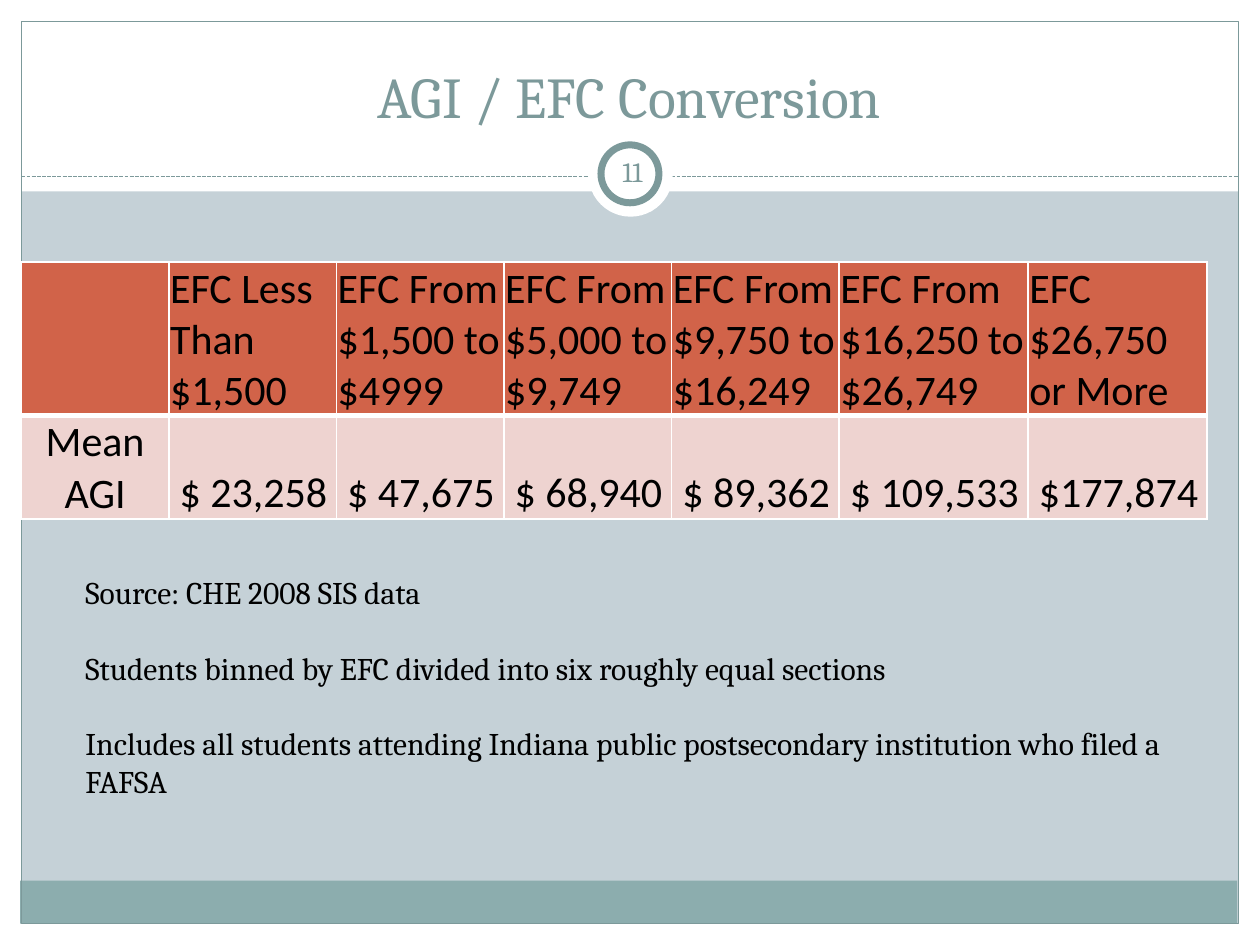
from lxml.etree import SubElement
from pptx import Presentation
from pptx.dml.color import RGBColor
from pptx.enum.dml import MSO_LINE_DASH_STYLE as Dash
from pptx.enum.shapes import MSO_CONNECTOR as Connector, MSO_SHAPE as Shape
from pptx.enum.text import MSO_ANCHOR as Anchor, PP_ALIGN as Align
from pptx.oxml.ns import qn
from pptx.util import Inches, Pt

WHITE, BLACK = "FFFFFF", "000000"
SLATE, TEAL, BACKDROP = "7C999A", "8CADAE", "C5D1D7"
HEADER_FILL, BODY_FILL = "D16349", "EED3D0"

FRAME_FILLS = [
    (0, 7.33, 10, 0.17, WHITE),
    (0, 0, 10, 1.52, WHITE),
    (0, 0, 0.17, 7.5, WHITE),
    (9.83, 0, 0.17, 7.5, WHITE),
    (0.16, 6.99, 9.66, 0.34, TEAL),
]
COLUMN_WIDTHS = [1.17, 1.33, 1.33, 1.33, 1.33, 1.5, 1.42]
ROW_HEIGHTS = [1.22, 0.82]
ROWS = [
    ["", "EFC Less Than $1,500", "EFC From $1,500 to $4999",
     "EFC From $5,000 to $9,749", "EFC From $9,750 to $16,249",
     "EFC From $16,250 to $26,749", "EFC $26,750 or More"],
    ["Mean AGI", " $ 23,258", " $ 47,675", " $ 68,940", " $ 89,362",
     " $ 109,533", " $177,874"],
]
NOTES = [
    "Source: CHE 2008 SIS data",
    "Students binned by EFC divided into six roughly equal sections",
    "Includes all students attending Indiana public postsecondary "
    "institution who filed a FAFSA",
]


def color(value):
    return RGBColor.from_string(value)


def paint(target, value):
    target.fill.solid()
    target.fill.fore_color.rgb = color(value)


def write(para, text, size, font="Cambria", ink=BLACK, align=Align.LEFT, after=0):
    para.alignment = align
    para.space_after = Pt(after)
    span = para.add_run()
    span.text = text
    span.font.size = Pt(size)
    span.font.name = font
    span.font.color.rgb = color(ink)


def add_shape(page, kind, left, top, width, height, fill=None, line=None, weight=0.75):
    shape = page.shapes.add_shape(
        kind, Inches(left), Inches(top), Inches(width), Inches(height))
    shape.shadow.inherit = False
    if fill:
        paint(shape, fill)
    else:
        shape.fill.background()
    if line:
        shape.line.color.rgb = color(line)
        shape.line.width = Pt(weight)
    else:
        shape.line.fill.background()


def add_dashed_rule(page, left, right, top):
    rule = page.shapes.add_connector(
        Connector.STRAIGHT, Inches(left), Inches(top), Inches(right), Inches(top))
    rule.line.color.rgb = color(SLATE)
    rule.line.width = Pt(0.75)
    rule.line.dash_style = Dash.SQUARE_DOT
    SubElement(rule.element.spPr, qn("a:effectLst"))


def add_frame(page):
    for left, top, width, height, fill in FRAME_FILLS:
        add_shape(page, Shape.RECTANGLE, left, top, width, height, fill)
    add_shape(page, Shape.RECTANGLE, 0.17, 0.17, 9.66, 7.16, line=SLATE)
    add_dashed_rule(page, 0.17, 9.83, 1.4)
    add_shape(page, Shape.OVAL, 4.67, 1.05, 0.67, 0.67, WHITE)
    add_shape(page, Shape.OVAL, 4.77, 1.15, 0.46, 0.46, WHITE, SLATE, 4)


def place_title(page, text):
    title = page.shapes.title
    title.left, title.top = Inches(0.33), Inches(0.25)
    title.width, title.height = Inches(9.33), Inches(0.83)
    title.text_frame.vertical_anchor = Anchor.BOTTOM
    write(title.text_frame.paragraphs[0], text, 33, ink=SLATE, align=Align.CENTER)
    title.element.getparent().append(title.element)


def add_text(page, left, top, width, height, texts, size,
             anchor=Anchor.TOP, inset=None, **style):
    box = page.shapes.add_textbox(
        Inches(left), Inches(top), Inches(width), Inches(height))
    frame = box.text_frame
    frame.word_wrap = True
    frame.vertical_anchor = anchor
    if inset is not None:
        frame.margin_left = frame.margin_right = Inches(inset)
        frame.margin_top = frame.margin_bottom = Inches(inset)
    for index, text in enumerate(texts):
        para = frame.add_paragraph() if index else frame.paragraphs[0]
        write(para, text, size, **style)


def add_border(cell, side, weight):
    properties = cell._tc.get_or_add_tcPr()
    line = SubElement(properties, qn(f"a:ln{side}"), w=str(Pt(weight)))
    fill = SubElement(line, qn("a:solidFill"))
    SubElement(fill, qn("a:srgbClr"), val=WHITE)


def format_cell(cell, text, is_header, is_label):
    cell.margin_left = cell.margin_right = cell.margin_top = Inches(0.01)
    cell.margin_bottom = 0
    cell.vertical_anchor = Anchor.BOTTOM
    for side in "LRTB":
        thick = side == ("B" if is_header else "T")
        add_border(cell, side, 3 if thick else 1)
    paint(cell, HEADER_FILL if is_header else BODY_FILL)
    if text:
        write(cell.text_frame.paragraphs[0], text, 24, font="Calibri",
              align=Align.CENTER if is_label else Align.LEFT)


def add_income_table(page):
    table = page.shapes.add_table(
        len(ROWS), len(COLUMN_WIDTHS), Inches(0.17), Inches(2.08),
        Inches(sum(COLUMN_WIDTHS)), Inches(sum(ROW_HEIGHTS))).table
    table.first_row = table.horz_banding = False
    for column, width in zip(table.columns, COLUMN_WIDTHS):
        column.width = Inches(width)
    for row_index, texts in enumerate(ROWS):
        table.rows[row_index].height = Inches(ROW_HEIGHTS[row_index])
        for column_index, text in enumerate(texts):
            format_cell(table.cell(row_index, column_index), text,
                        row_index == 0, column_index == 0)


def main():
    deck = Presentation()
    deck.slide_width, deck.slide_height = Inches(10), Inches(7.5)
    page = deck.slides.add_slide(deck.slide_layouts[5])
    paint(page.background, BACKDROP)
    add_frame(page)
    place_title(page, "AGI / EFC Conversion")
    add_text(page, 4.77, 1.12, 0.5, 0.48, ["11"], 16, anchor=Anchor.MIDDLE,
             inset=0.05, ink=SLATE, align=Align.CENTER)
    add_income_table(page)
    add_text(page, 0.58, 4.5, 8.92, 1.92, NOTES, 18, after=21.5)
    deck.save("out.pptx")


if __name__ == "__main__":
    main()
